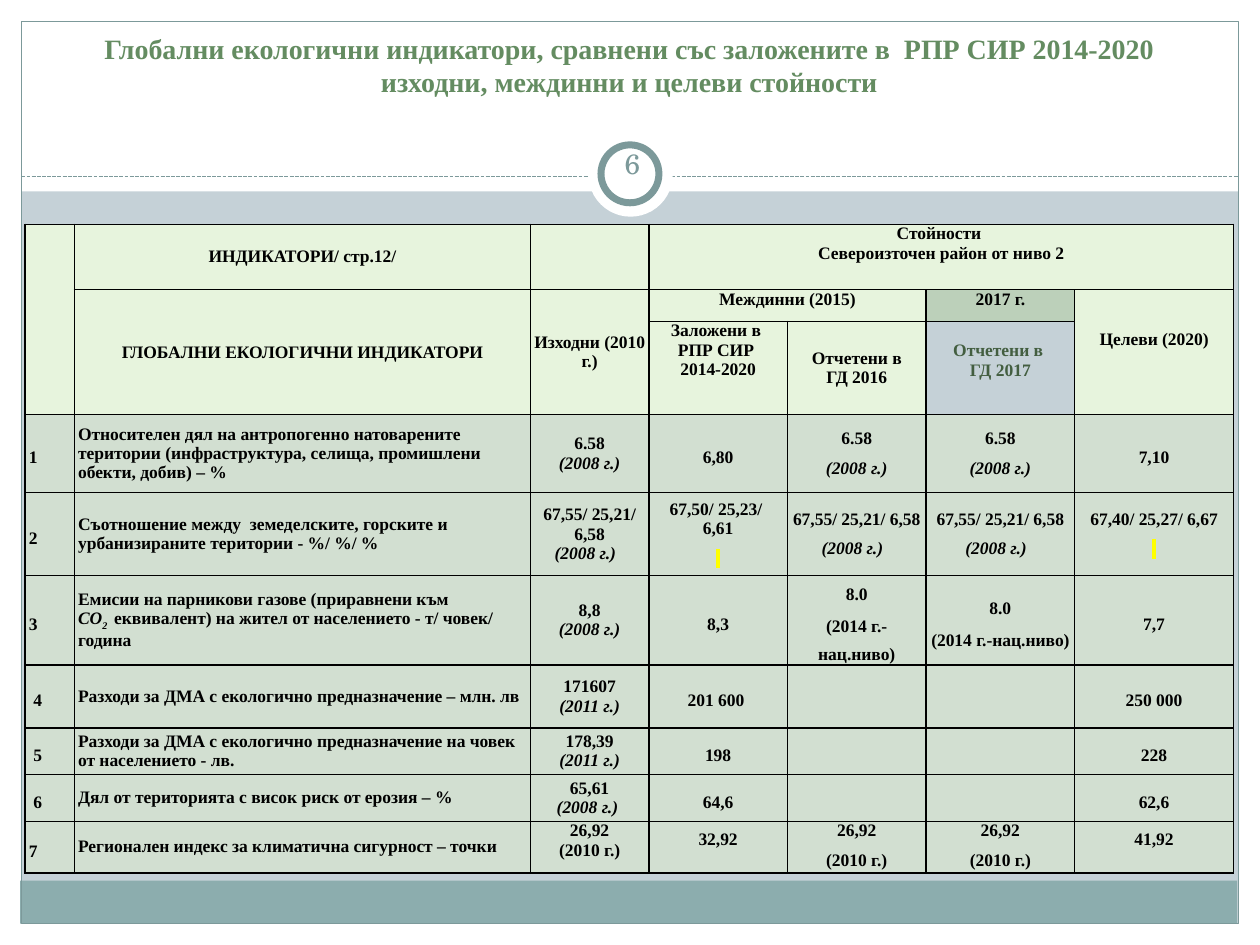
from lxml.etree import SubElement
from pptx import Presentation
from pptx.dml.color import RGBColor
from pptx.enum.dml import MSO_LINE
from pptx.enum.shapes import MSO_CONNECTOR, MSO_SHAPE
from pptx.enum.text import MSO_ANCHOR, PP_ALIGN
from pptx.oxml.ns import qn
from pptx.util import Inches, Pt

COLOURS = {
    "background": "C5D1D7", "paper": "FFFFFF", "band": "8CADAE", "frame": "7C999A",
    "title": "648C61", "ink": "000000", "report": "435E40", "mark": "FFFF00",
    "head": "E7F4DD", "year": "BCD0BA", "body": "D2DFD1",
}
SERIF = "Times New Roman"
TOP, MIDDLE, BOTTOM = MSO_ANCHOR.TOP, MSO_ANCHOR.MIDDLE, MSO_ANCHOR.BOTTOM
HIGHLIGHT = "#" + chr(160)  # a marked no-break space

COLUMN_WIDTHS = [3.9, 36.2, 9.4, 11, 11, 11.8, 12.6]
ROW_HEIGHTS = [5.2, 2.5, 7.4, 6.2, 6.6, 7.1, 5, 3.7, 3.7, 4.1]

# Text marks: "~" loose paragraph, "|" next run, "_" italic, "^" subscript, "#" highlight
# (row, column, rows spanned, columns spanned, text, anchor, top margin)
HEADERS = [
    (0, 0, 3, 1, "", TOP, 0),
    (0, 1, 1, 1, "ИНДИКАТОРИ/ стр.12/", MIDDLE, 0),
    (0, 2, 1, 1, "", TOP, 0),
    (0, 3, 1, 4, "Стойности \nСевероизточен район от ниво 2", TOP, 0),
    (1, 1, 2, 1, "ГЛОБАЛНИ ЕКОЛОГИЧНИ ИНДИКАТОРИ", MIDDLE, 0),
    (1, 2, 2, 1, "Изходни (2010 г.)", MIDDLE, 0),
    (1, 3, 1, 2, "Междинни (2015)", TOP, 0),
    (1, 5, 1, 1, "2017 г.", TOP, 0),
    (1, 6, 2, 1, "Целеви (2020)", TOP, 3.2),
    (2, 3, 1, 1, "Заложени в \nРПР СИР \n2014-2020", TOP, 0),
    (2, 4, 1, 1, "Отчетени в\nГД 2016", MIDDLE, 0),
    (2, 5, 1, 1, "Отчетени в \nГД 2017", TOP, 1.6),
]
HEADER_FILLS = {(1, 5): "year", (2, 5): None}
HEADER_INKS = {(2, 5): "report"}

LAND_2008 = "6.58\n~_(2008 г.)"
SHARES_2008 = "67,55/ 25,21/ 6,58\n~_(2008 г.)  "
EMISSIONS_2014 = "~8.0\n~(2014 г.-нац.ниво)"
CLIMATE_2010 = "26,92\n~(2010 г.)"
INDICATORS = [
    ("~1", "Относителен дял на антропогенно натоварените територии "
     "(инфраструктура, селища, промишлени обекти, добив) – %",
     "6.58\n_(2008 г.)", "~6,80", LAND_2008, LAND_2008, "~7,10"),
    ("~2", "Съотношение между  земеделските, горските и урбанизираните територии - %/ %/ %",
     "67,55/ 25,21/ 6,58\n_(2008 г.)  ", "67,50/ 25,23/ \n6,61\n~" + HIGHLIGHT,
     SHARES_2008, SHARES_2008, "67,40/ 25,27/ 6,67\n~" + HIGHLIGHT),
    ("~3", "Емисии на парникови газове (приравнени към\n"
     "_CO|_^2 | еквивалент) на жител от населението - т/ човек/ година",
     "8,8\n_(2008 г.)", "~8,3", EMISSIONS_2014, EMISSIONS_2014, "~7,7"),
    ("~ 4", "Разходи за ДМА с екологично предназначение – млн. лв",
     "171607\n_(2011 г.)", "~201 600 ", "", "", "~250 000"),
    ("~ 5", "Разходи за ДМА с екологично предназначение на човек от населението - лв.",
     "178,39\n_(2011 г.)", "~198", "", "", "~228"),
    ("~ 6", "Дял от територията с висок риск от ерозия – %",
     "65,61\n_(2008 г.) ", "~64,6", "", "", "~62,6"),
    ("~7", "Регионален индекс за климатична сигурност – точки",
     "26,92\n(2010 г.)", "~32,92", CLIMATE_2010, CLIMATE_2010, "~41,92"),
]


def colour(name):
    return RGBColor.from_string(COLOURS[name])


def grid(*units):
    """Lengths on a grid of 100 columns and 75 rows."""
    return [Inches(unit / 10) for unit in units]


class SlideBuilder:
    def __init__(self, slide):
        self.slide = slide
        slide.background.fill.solid()
        slide.background.fill.fore_color.rgb = colour("background")

    def paint(self, target, name):
        if name:
            target.fill.solid()
            target.fill.fore_color.rgb = colour(name)
        else:
            target.fill.background()

    def shape(self, kind, box, fill=None, line=None, weight=0.75):
        shape = self.slide.shapes.add_shape(kind, *grid(*box))
        shape.shadow.inherit = False
        self.paint(shape, fill)
        if line:
            shape.line.color.rgb = colour(line)
            shape.line.width = Pt(weight)
        else:
            shape.line.fill.background()

    def dashes(self, start, end, ink):
        line = self.slide.shapes.add_connector(MSO_CONNECTOR.STRAIGHT, *grid(*start, *end))
        line.line.color.rgb = colour(ink)
        line.line.width = Pt(0.75)
        line.line.dash_style = MSO_LINE.SQUARE_DOT
        SubElement(line._element.spPr, qn("a:effectLst"))

    def run(self, paragraph, text, size, ink, font=SERIF, bold=True):
        content = text.lstrip("_^#")
        marks = text[:len(text) - len(content)]
        run = paragraph.add_run()
        run.text = content
        run.font.size, run.font.bold = Pt(size), bold
        run.font.color.rgb = colour(ink)
        properties = run.font._element
        if "#" in marks:
            highlight = SubElement(properties, qn("a:highlight"))
            SubElement(highlight, qn("a:srgbClr"), val=COLOURS["mark"])
        run.font.name = font
        if "_" in marks:
            run.font.italic = True
        if "^" in marks:
            properties.set("baseline", "-25000")

    def text(self, box, content, ink, anchor, margins, font=SERIF, bold=True):
        frame = self.slide.shapes.add_textbox(*grid(*box)).text_frame
        frame.word_wrap = True
        frame.vertical_anchor = anchor
        (frame.margin_left, frame.margin_top,
         frame.margin_right, frame.margin_bottom) = grid(*margins)
        frame.paragraphs[0].alignment = PP_ALIGN.CENTER
        self.run(frame.paragraphs[0], content, 16, ink, font, bold)

    def table(self, corner, widths, heights):
        box = grid(*corner, sum(widths), sum(heights))
        table = self.slide.shapes.add_table(len(heights), len(widths), *box).table
        table.first_row = table.horz_banding = False
        for column, width in zip(table.columns, grid(*widths)):
            column.width = width
        for row, height in zip(table.rows, grid(*heights)):
            row.height = height
        for cell in table.iter_cells():
            self.borders(cell)
            self.paint(cell, "head")
            end = SubElement(cell.text_frame.paragraphs[0]._p, qn("a:endParaRPr"))
            end.set("sz", "1000")
        return table

    def borders(self, cell):
        properties = cell._tc.get_or_add_tcPr()
        for side in ("lnL", "lnR", "lnT", "lnB"):
            line = SubElement(properties, qn("a:" + side), w=str(Pt(1)))
            fill = SubElement(line, qn("a:solidFill"))
            SubElement(fill, qn("a:srgbClr"), val=COLOURS["ink"])

    def cell(self, cell, content, fill, anchor=MIDDLE, top=0, ink="ink",
             align=PP_ALIGN.CENTER):
        self.paint(cell, fill)
        cell.vertical_anchor = anchor
        (cell.margin_left, cell.margin_top,
         cell.margin_right, cell.margin_bottom) = grid(0.3, top, 0.3, 0)
        if not content:
            return
        frame = cell.text_frame
        for index, line in enumerate(content.split("\n")):
            paragraph = frame.add_paragraph() if index else frame.paragraphs[0]
            paragraph.alignment = align
            if line.startswith("~"):
                paragraph.line_spacing = Pt(16)
                paragraph.space_before = paragraph.space_after = Pt(1)
            for part in line.removeprefix("~").split("|"):
                self.run(paragraph, part, 10, ink)


def main():
    deck = Presentation()
    deck.slide_width, deck.slide_height = grid(100, 75)
    page = SlideBuilder(deck.slides.add_slide(deck.slide_layouts[6]))

    # White margins and header area
    for margin in ((0, 73.3, 100, 1.7), (0, 0, 100, 15.2),
                   (0, 0, 1.7, 75), (98.3, 0, 1.7, 75)):
        page.shape(MSO_SHAPE.RECTANGLE, margin, "paper")

    # Footer band, frame and divider
    page.shape(MSO_SHAPE.RECTANGLE, (1.6, 69.9, 96.6, 3.4), "band")
    page.shape(MSO_SHAPE.RECTANGLE, (1.7, 1.7, 96.6, 71.6), line="frame")
    page.dashes((1.7, 14), (98.3, 14), "frame")

    # Page number badge
    page.shape(MSO_SHAPE.OVAL, (46.7, 10.5, 6.7, 6.7), "paper")
    page.shape(MSO_SHAPE.OVAL, (47.7, 11.5, 4.6, 4.6), "paper", "frame", 4)

    # Title and page number
    page.text((3.3, 2.5, 93.3, 8.3),
              "Глобални екологични индикатори, сравнени със заложените в  РПР СИР 2014-2020 "
              "изходни, междинни и целеви стойности", "title", BOTTOM, (3, 0.5, 3, 3))
    page.text((47.7, 9.9, 5, 6.1), "6", "frame", MIDDLE, [0.5] * 4,
              "TeX Gyre Schola", False)

    # Table headers
    table = page.table((2, 17.8), COLUMN_WIDTHS, ROW_HEIGHTS)
    for row, column, rows, columns, content, anchor, top in HEADERS:
        cell = table.cell(row, column)
        if rows * columns > 1:
            cell.merge(table.cell(row + rows - 1, column + columns - 1))
        place = (row, column)
        page.cell(cell, content, HEADER_FILLS.get(place, "head"), anchor, top,
                  HEADER_INKS.get(place, "ink"))

    # Indicator rows: number and name to the left, values centred
    for row, indicator in enumerate(INDICATORS, start=3):
        last = row == len(ROW_HEIGHTS) - 1
        for column, content in enumerate(indicator):
            page.cell(table.cell(row, column), content, "body",
                      TOP if last and column > 1 else MIDDLE,
                      align=PP_ALIGN.LEFT if column < 2 else PP_ALIGN.CENTER)

    deck.save("out.pptx")


if __name__ == "__main__":
    main()
